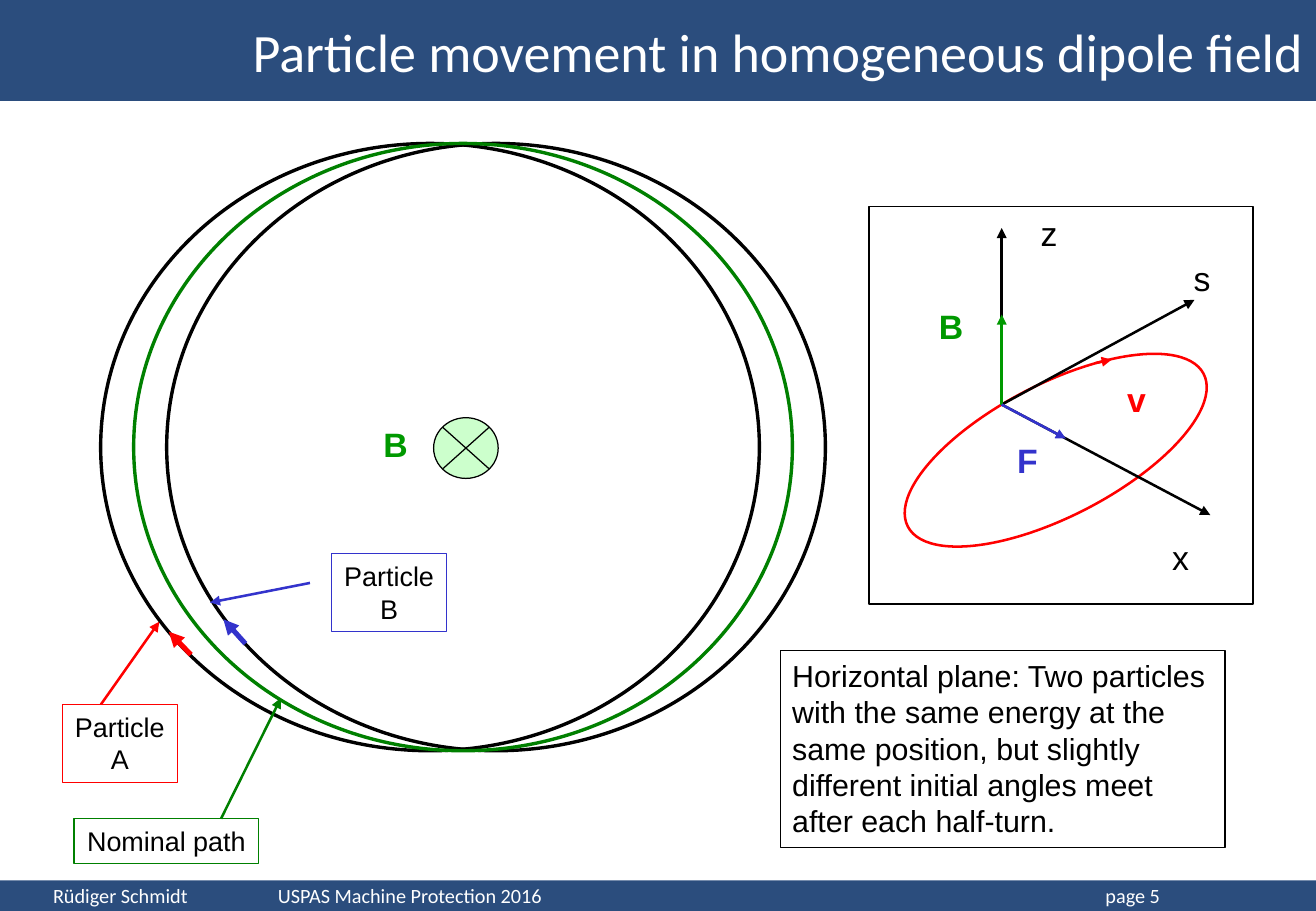
"""Build a slide on particle movement in a homogeneous dipole field."""
from dataclasses import dataclass

from lxml.etree import SubElement
from pptx import Presentation
from pptx.dml.color import RGBColor
from pptx.enum.shapes import MSO_CONNECTOR, MSO_SHAPE
from pptx.enum.text import MSO_ANCHOR, PP_ALIGN
from pptx.oxml.ns import qn
from pptx.util import Cm, Pt


@dataclass(frozen=True)
class Theme:
    bar: str = "062F67"
    bar_alpha: int = 85000
    white: str = "FFFFFF"
    black: str = "000000"
    red: str = "FF0000"
    blue: str = "3333CC"
    green: str = "008000"
    field: str = "009900"
    field_fill: str = "CCFFCC"
    heading_font: str = "Calibri"
    body_font: str = "Arial"
    title: int = 32
    symbol: int = 20
    note: int = 18
    label: int = 16
    footer: int = 12
    hairline: float = 0.75
    thin: float = 1.5
    orbit: float = 2
    thick: float = 3


THEME = Theme()
WIDTH, HEIGHT = 27.51, 19.05
HEADER_HEIGHT, FOOTER_HEIGHT = 2.11, 0.64
FOOTER_TOP = HEIGHT - FOOTER_HEIGHT

TITLE = "Particle movement in homogeneous dipole field"
TITLE_LEFT = 2.29
FOOTER = ("Rüdiger Schmidt", "USPAS Machine Protection 2016", "page 5")
FOOTER_MARGIN, FOOTER_TABS = 1.11, (4.7, 22.0)

ORBIT_CENTRE, ORBIT_SIZE, ORBIT_SHIFT = (9.68, 9.35), (13.77, 12.7), 0.69
ORBITS = [(-1, THEME.black), (1, THEME.black), (0, THEME.green)]
FIELD_CENTRE, FIELD_SIZE, CROSS_SIZE = (9.74, 9.37), (1.35, 1.27), (0.96, 0.86)

FRAME = (18.16, 4.32, 8.03, 8.31)
TILTED_ORBIT = (18.59, 8.03, 6.96, 2.77)
TILT = 332.7
ORIGIN = (20.94, 8.46)

ARROWS = [
    ((3.99, 13.69), (3.53, 13.21), THEME.red, THEME.thick),
    ((5.13, 13.46), (4.67, 12.95), THEME.blue, THEME.thick),
    (ORIGIN, (20.94, 4.77), THEME.black, THEME.thin),
    (ORIGIN, (25.3, 10.77), THEME.black, THEME.thin),
    (ORIGIN, (24.97, 6.27), THEME.black, THEME.thin),
    ((22.91, 7.59), (23.24, 7.52), THEME.red, THEME.thin),
    (ORIGIN, (20.94, 6.58), THEME.field, THEME.thin),
    (ORIGIN, (22.28, 9.17), THEME.blue, THEME.thin),
    ((4.62, 17.12), (5.87, 14.6), THEME.green, THEME.thin),
    ((6.48, 12.19), (4.39, 12.6), THEME.blue, THEME.thin),
    ((2.11, 14.73), (3.33, 13.0), THEME.red, THEME.thin),
]

SYMBOL_SIZE = (1.6, 1.12)
SYMBOLS = [
    ("z", (21.93, 4.88), THEME.black, False),
    ("x", (24.68, 11.66), THEME.black, False),
    ("s", (25.13, 5.82), THEME.black, False),
    ("v", (23.76, 8.36), THEME.red, True),
    ("B", (19.88, 6.83), THEME.field, True),
    ("F", (21.48, 9.63), THEME.blue, True),
    ("B", (8.27, 9.3), THEME.field, True),
]

NOTE = ("Horizontal plane: Two particles with the same energy at the same position, "
        "but slightly different initial angles meet after each half-turn.")
NOTE_BOX = (16.31, 13.61, 9.3, 4.11)
CALLOUTS = [
    ("Nominal path", (1.55, 17.12, 3.86, 0.94), THEME.green),
    ("Particle\nA", (1.3, 14.73, 2.41, 1.63), THEME.red),
    ("Particle\nB", (6.93, 11.58, 2.41, 1.63), THEME.blue),
]


def centred(centre, size):
    return (centre[0] - size[0] / 2, centre[1] - size[1] / 2, *size)


def add_figure(slide, kind, box, fill=None, line=None, weight=THEME.hairline):
    shape = slide.shapes.add_shape(kind, *map(Cm, box))
    shape.shadow.inherit = False
    if fill:
        shape.fill.solid()
        shape.fill.fore_color.rgb = RGBColor.from_string(fill)
    else:
        shape.fill.background()
    if line:
        shape.line.color.rgb = RGBColor.from_string(line)
        shape.line.width = Pt(weight)
    else:
        shape.line.fill.background()
    return shape


def add_bar(slide, box):
    bar = add_figure(slide, MSO_SHAPE.RECTANGLE, box, THEME.bar)
    colour = bar.fill._xPr.find(qn("a:solidFill"))[0]
    SubElement(colour, qn("a:alpha"), val=str(THEME.bar_alpha))


def add_line(slide, start, end, colour, weight, arrow=True):
    line = slide.shapes.add_connector(MSO_CONNECTOR.STRAIGHT, *map(Cm, (*start, *end)))
    line.line.color.rgb = RGBColor.from_string(colour)
    line.line.width = Pt(weight)
    if arrow:
        SubElement(line.line._get_or_add_ln(), qn("a:tailEnd"), type="triangle")
    SubElement(line._element.spPr, qn("a:effectLst"))


def write(shape, text, size, colour=THEME.black, font=THEME.body_font, bold=False,
          align=PP_ALIGN.CENTER, anchor=MSO_ANCHOR.TOP, wrap=True, tabs=()):
    frame = shape.text_frame
    frame.text = text
    frame.word_wrap = wrap
    frame.vertical_anchor = anchor
    for paragraph in frame.paragraphs:
        paragraph.alignment = align
        if tabs:
            tab_list = SubElement(paragraph._p.get_or_add_pPr(), qn("a:tabLst"))
            for tab in tabs:
                SubElement(tab_list, qn("a:tab"), pos=str(Cm(tab)), algn="l")
        for run in paragraph.runs:
            run.font.name = font
            run.font.size = Pt(size)
            run.font.bold = bold
            run.font.color.rgb = RGBColor.from_string(colour)


def add_text(slide, box, text, size, **style):
    shape = slide.shapes.add_textbox(*map(Cm, box))
    write(shape, text, size, **style)
    return shape


def add_bars(slide):
    add_bar(slide, (0, 0, WIDTH, HEADER_HEIGHT))
    add_bar(slide, (0, FOOTER_TOP, WIDTH, FOOTER_HEIGHT))
    add_text(slide, (TITLE_LEFT, 0, WIDTH - TITLE_LEFT, HEADER_HEIGHT), TITLE, THEME.title,
             colour=THEME.white, font=THEME.heading_font,
             align=PP_ALIGN.RIGHT, anchor=MSO_ANCHOR.MIDDLE)
    footer = add_text(slide, (0, FOOTER_TOP, WIDTH, FOOTER_HEIGHT), "\t".join(FOOTER),
                      THEME.footer, colour=THEME.white, font=THEME.heading_font,
                      align=PP_ALIGN.LEFT, anchor=MSO_ANCHOR.MIDDLE, tabs=FOOTER_TABS)
    footer.text_frame.margin_left = Cm(FOOTER_MARGIN)
    footer.text_frame.margin_top = footer.text_frame.margin_bottom = 0


def add_diagram(slide):
    for step, colour in ORBITS:
        centre = (ORBIT_CENTRE[0] + step * ORBIT_SHIFT, ORBIT_CENTRE[1])
        add_figure(slide, MSO_SHAPE.OVAL, centred(centre, ORBIT_SIZE),
                   line=colour, weight=THEME.orbit)
    add_figure(slide, MSO_SHAPE.OVAL, centred(FIELD_CENTRE, FIELD_SIZE),
               THEME.field_fill, THEME.black)
    left, top, width, height = centred(FIELD_CENTRE, CROSS_SIZE)
    for start, end in ((top, top + height), (top + height, top)):
        add_line(slide, (left, start), (left + width, end),
                 THEME.black, THEME.hairline, arrow=False)
    add_figure(slide, MSO_SHAPE.RECTANGLE, FRAME, line=THEME.black, weight=1)
    tilted = add_figure(slide, MSO_SHAPE.OVAL, TILTED_ORBIT, line=THEME.red, weight=THEME.thin)
    tilted.rotation = TILT
    for arrow in ARROWS:
        add_line(slide, *arrow)


def add_labels(slide):
    for text, centre, colour, bold in SYMBOLS:
        add_text(slide, centred(centre, SYMBOL_SIZE), text, THEME.symbol,
                 colour=colour, bold=bold)
    note = add_figure(slide, MSO_SHAPE.RECTANGLE, NOTE_BOX, line=THEME.black)
    write(note, NOTE, THEME.note, align=PP_ALIGN.LEFT)
    for text, box, colour in CALLOUTS:
        callout = add_figure(slide, MSO_SHAPE.RECTANGLE, box, line=colour)
        write(callout, text, THEME.label, wrap=False)


def main():
    presentation = Presentation()
    presentation.slide_width, presentation.slide_height = Cm(WIDTH), Cm(HEIGHT)
    slide = presentation.slides.add_slide(presentation.slide_layouts[6])
    add_bars(slide)
    add_diagram(slide)
    add_labels(slide)
    presentation.save("out.pptx")


if __name__ == "__main__":
    main()
